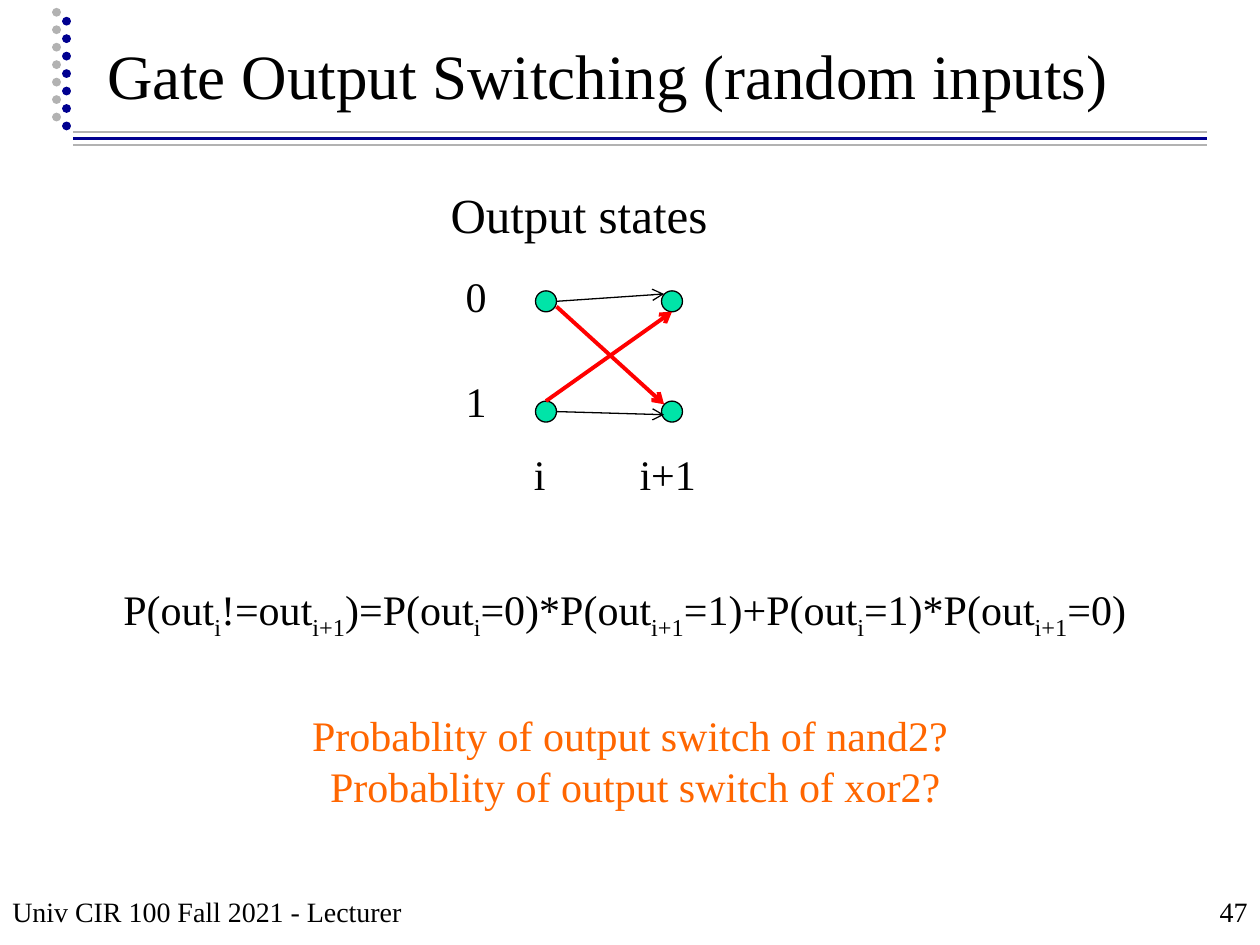
import pptx
import pptx.util
import pptx.dml.color
import pptx.enum.dml
import pptx.enum.shapes
import pptx.enum.text
import pptx.oxml

COLORS = {
    "navy": "000090",
    "gray": "B2B2B2",
    "black": "000000",
    "green": "00E4A8",
    "red": "FF0000",
    "orange": "FF6600",
}
FONT = "Times New Roman"
ALIGN = pptx.enum.text.PP_ALIGN
ANCHOR = pptx.enum.text.MSO_ANCHOR

presentation = pptx.Presentation()
presentation.slide_width = pptx.util.Inches(10)
presentation.slide_height = pptx.util.Inches(7.5)
column = presentation.slide_width / 120
row = presentation.slide_height / 90
slide = presentation.slides.add_slide(presentation.slide_layouts[5])


def add_line(start, end, color, width):
    connector = slide.shapes.add_connector(
        pptx.enum.shapes.MSO_CONNECTOR.STRAIGHT,
        int(start[0] * column), int(start[1] * row),
        int(end[0] * column), int(end[1] * row))
    connector.line.color.rgb = pptx.dml.color.RGBColor.from_string(COLORS[color])
    connector.line.width = pptx.util.Pt(width)
    properties = connector._element.spPr
    properties.append(pptx.oxml.parse_xml(
        '<a:effectLst xmlns:a="http://schemas.openxmlformats.org/drawingml/2006/main"/>'))
    return connector


def fill_text(shape, box, lines, size, color="black", align=ALIGN.CENTER,
              anchor=ANCHOR.TOP, wrap=True):
    shape.left, shape.width = int(box[0] * column), int(box[2] * column)
    shape.top, shape.height = int(box[1] * row), int(box[3] * row)
    frame = shape.text_frame
    frame.text = "\n".join(lines)
    frame.word_wrap = wrap
    frame.auto_size = pptx.enum.text.MSO_AUTO_SIZE.NONE
    frame.vertical_anchor = anchor
    for paragraph in frame.paragraphs:
        paragraph.alignment = align
        paragraph.font.name = FONT
        paragraph.font.size = pptx.util.Pt(size)
        paragraph.font.color.rgb = pptx.dml.color.RGBColor.from_string(COLORS[color])
    return frame


for y, color, width in [(13.2, "navy", 2), (13.8, "gray", 1), (12.6, "gray", 1)]:
    add_line((7, y), (115, y), color, width)

for x, bottom, color in [(5.4, 11.15, "gray"), (6.35, 12, "navy")]:
    dots = add_line((x, bottom), (x, bottom - 11), color, 5)
    dots.line.dash_style = pptx.enum.dml.MSO_LINE.ROUND_DOT
    dots.line._ln.set("cap", "rnd")

fill_text(slide.shapes.title, (9, 1.3, 102.2, 10),
          ["Gate Output Switching (random inputs)"], 36,
          align=ALIGN.LEFT, anchor=ANCHOR.BOTTOM)

for x in (51, 63):
    for y in (27.7, 38.2):
        state = slide.shapes.add_shape(
            pptx.enum.shapes.MSO_SHAPE.OVAL,
            int(x * column), int(y * row), int(2 * column), int(2 * row))
        state.shadow.inherit = False
        state.fill.solid()
        state.fill.fore_color.rgb = pptx.dml.color.RGBColor.from_string(COLORS["green"])
        state.line.color.rgb = pptx.dml.color.RGBColor.from_string(COLORS["black"])
        state.line.width = pptx.util.Pt(0.75)

transitions = [
    ((53, 29.2), (63.25, 38.5), "red", 2.25),
    ((53, 28.7), (63.25, 28), "black", 0.75),
    ((53, 39.2), (63.25, 39.5), "black", 0.75),
    ((52, 38.2), (64, 29.7), "red", 2.25),
]
for start, end, color, width in transitions:
    arrow = add_line(start, end, color, width)
    arrow.line._ln.append(pptx.oxml.parse_xml(
        '<a:tailEnd xmlns:a="http://schemas.openxmlformats.org/drawingml/2006/main" type="arrow"/>'))

labels = [
    ("Output states", (41.6, 17, 27.1, 6.8), 28),
    ("0", (43.2, 25.2, 4.3, 6), 24),
    ("1", (43.2, 35.2, 4.3, 6), 24),
    ("i", (49.7, 42.1, 3.4, 6), 24),
    ("i+1", (59.65, 42.1, 7.9, 6), 24),
]
for label, box, size in labels:
    fill_text(slide.shapes.add_textbox(0, 0, 0, 0), box, [label], size, wrap=False)

formula = fill_text(slide.shapes.add_textbox(0, 0, 0, 0), (0, 55, 119, 6), [""], 24)
pieces = ["P(out", "i", "!=out", "i+1", ")=P(out", "i", "=0)*P(out", "i+1",
          "=1)+P(out", "i", "=1)*P(out", "i+1", "=0)"]
for index, piece in enumerate(pieces):
    run = formula.paragraphs[0].add_run()
    run.text = piece
    if index % 2:
        run._r.get_or_add_rPr().set("baseline", "-25000")

questions = fill_text(
    slide.shapes.add_textbox(0, 0, 0, 0), (15, 67, 85, 10.9),
    ["Probablity of output switch of nand2? ", "Probablity of output switch of xor2?"],
    24, "orange")
for paragraph in questions.paragraphs:
    paragraph.level = 1
    paragraph._p.get_or_add_pPr().set("marL", str(int(6 * column)))

footers = [
    ("Univ CIR 100 Fall 2021 - Lecturer", (0, 83, 65, 6), ALIGN.LEFT),
    ("47", (95, 83, 25, 6), ALIGN.RIGHT),
]
for text, box, align in footers:
    fill_text(slide.shapes.add_textbox(0, 0, 0, 0), box, [text], 16,
              align=align, anchor=ANCHOR.BOTTOM)

presentation.save("out.pptx")
